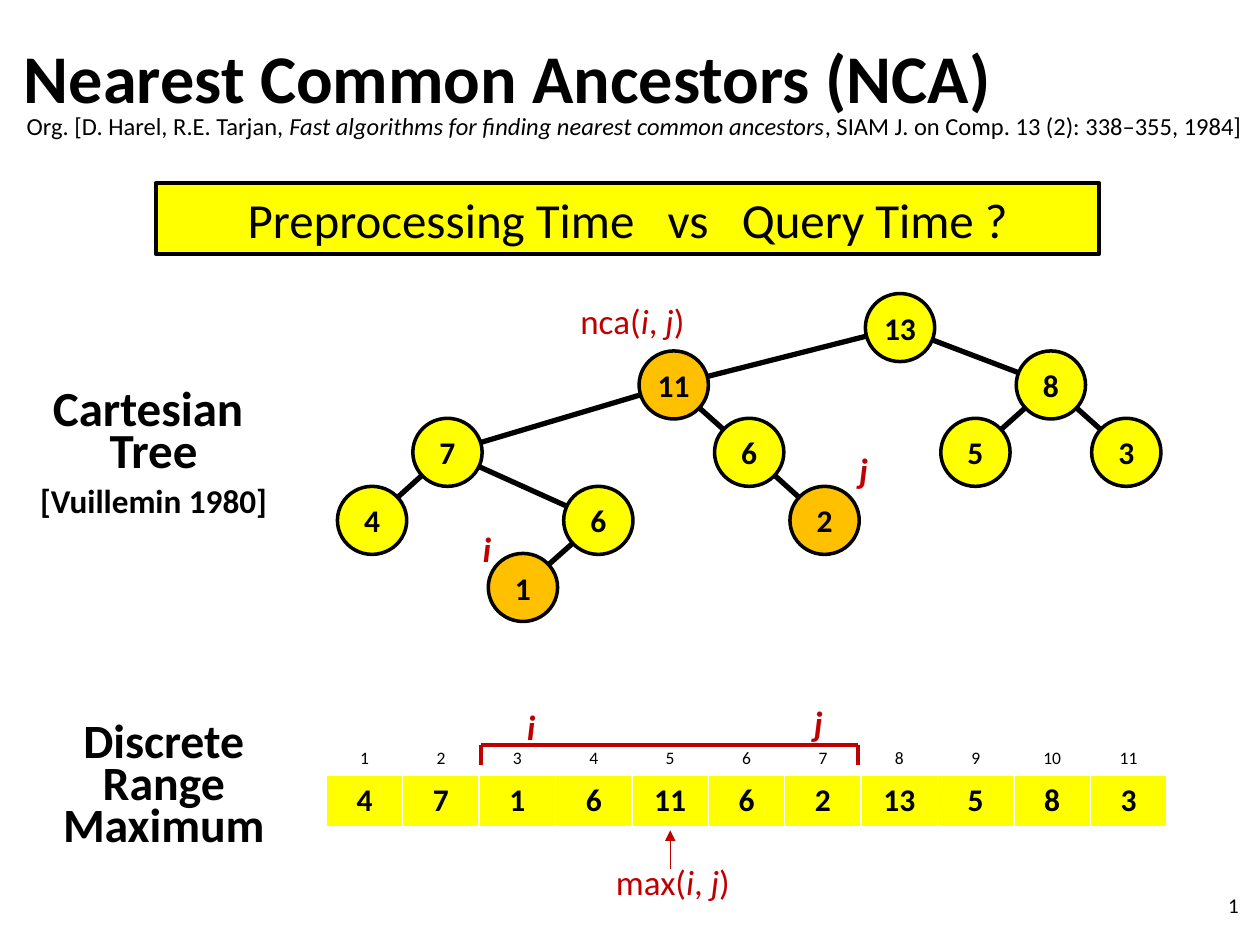
from typing import NamedTuple, Optional

from lxml.etree import SubElement
from pptx import Presentation
from pptx.dml.color import RGBColor
from pptx.enum.shapes import MSO_CONNECTOR, MSO_SHAPE
from pptx.enum.text import MSO_ANCHOR, PP_ALIGN
from pptx.oxml.ns import qn
from pptx.util import Pt

BLACK = RGBColor(0x00, 0x00, 0x00)
WHITE = RGBColor(0xFF, 0xFF, 0xFF)
YELLOW = RGBColor(0xFF, 0xFF, 0x00)
ORANGE = RGBColor(0xFF, 0xC0, 0x00)
RED = RGBColor(0xC0, 0x00, 0x00)

NODE_W, NODE_H = 39.6, 38.9
FIRST_X, STEP_X = 212.6, 43.1
LEVEL_Y = [187.2, 220, 258.5, 297.4, 335.7]


class Node(NamedTuple):
    """A tree node; nodes are listed in array order, parents by array index."""
    value: int
    level: int
    parent: Optional[int]
    fill: RGBColor = YELLOW

    def center(self, index: int) -> tuple[float, float]:
        return FIRST_X + STEP_X * (index - 1), LEVEL_Y[self.level]


class Label(NamedTuple):
    text: str
    x: float
    y: float
    w: float
    bold: bool


NODES = [
    Node(4, 3, 2),
    Node(7, 2, 5),
    Node(1, 4, 4, ORANGE),
    Node(6, 3, 2),
    Node(11, 1, 8, ORANGE),
    Node(6, 2, 5),
    Node(2, 3, 6, ORANGE),
    Node(13, 0, None),
    Node(5, 2, 10),
    Node(8, 1, 8),
    Node(3, 2, 10),
]

LABELS = [
    Label("*i*", 286.6, 399.6, 33.8, True),
    Label("*j*", 450.7, 397.4, 33.8, True),
    Label("*i*", 261.4, 298.1, 33.8, True),
    Label("*j*", 476.6, 252.7, 33.8, True),
    Label("nca(*i*, *j*)", 289.4, 167.8, 144, False),
    Label("max(*i*, *j*)", 312.5, 488.2, 144, False),
]


def write(tf, text: str, *, size: float, bold=False, color=BLACK,
          align=PP_ALIGN.CENTER, spacing=None) -> None:
    """Add a paragraph; *stars* mark italics and \\n marks a line break."""
    p = tf.paragraphs[0]
    if p.runs:
        p = tf.add_paragraph()
    p.alignment = align
    p.line_spacing = spacing
    for k, part in enumerate(text.split("*")):
        for n, line in enumerate(part.split("\n")):
            if n:
                p.add_line_break()
            if not line:
                continue
            r = p.add_run()
            r.text = line
            r.font.name = "Calibri"
            r.font.size = Pt(size)
            r.font.bold = bold
            r.font.italic = k % 2 == 1
            r.font.color.rgb = color


def add_text_frame(s, x: float, y: float, w: float, h: float, anchor=MSO_ANCHOR.MIDDLE):
    tf = s.shapes.add_textbox(Pt(x), Pt(y), Pt(w), Pt(h)).text_frame
    tf.word_wrap = True
    tf.vertical_anchor = anchor
    return tf


def add_line(s, start: tuple[float, float], end: tuple[float, float], *,
             width: float, color=BLACK, arrow=False) -> None:
    cx = s.shapes.add_connector(MSO_CONNECTOR.STRAIGHT, *map(Pt, start + end))
    cx.line.color.rgb = color
    cx.line.width = Pt(width)
    if arrow:
        SubElement(cx.line._get_or_add_ln(), qn("a:tailEnd"), type="triangle")
    SubElement(cx._element.spPr, qn("a:effectLst"))


def add_box(s, kind, x: float, y: float, w: float, h: float, *, fill: RGBColor, line: float):
    sp = s.shapes.add_shape(kind, Pt(x), Pt(y), Pt(w), Pt(h))
    sp.shadow.inherit = False
    sp.fill.solid()
    sp.fill.fore_color.rgb = fill
    sp.line.color.rgb = BLACK
    sp.line.width = Pt(line)
    return sp.text_frame


def add_tree(s) -> None:
    for i, node in enumerate(NODES, 1):
        if node.parent:
            parent = NODES[node.parent - 1]
            add_line(s, parent.center(node.parent), node.center(i), width=3)
    for i, node in enumerate(NODES, 1):
        x, y = node.center(i)
        tf = add_box(s, MSO_SHAPE.OVAL, x - NODE_W / 2, y - NODE_H / 2, NODE_W, NODE_H,
                     fill=node.fill, line=2)
        tf.margin_left = tf.margin_right = 0
        tf.word_wrap = False
        tf.vertical_anchor = MSO_ANCHOR.MIDDLE
        write(tf, str(node.value), size=18, bold=True)


def add_borders(cell) -> None:
    for side in ("a:lnL", "a:lnR", "a:lnT", "a:lnB"):
        ln = SubElement(cell._tc.get_or_add_tcPr(), qn(side), w=str(Pt(1)))
        fill = SubElement(ln, qn("a:solidFill"))
        SubElement(fill, qn("a:srgbClr"), val=str(WHITE))


def add_array(s) -> None:
    table = s.shapes.add_table(2, len(NODES), Pt(186.5), Pt(414), Pt(480.2), Pt(58.4)).table
    table.first_row = table.horz_banding = False
    for i, node in enumerate(NODES):
        index, value = table.cell(0, i), table.cell(1, i)
        index.fill.background()
        index.vertical_anchor = MSO_ANCHOR.BOTTOM
        write(index.text_frame, str(i + 1), size=10)
        add_borders(value)
        value.fill.solid()
        value.fill.fore_color.rgb = YELLOW
        write(value.text_frame, str(node.value), size=18, bold=True)


def add_range_bracket(s) -> None:
    left, right, top, bottom = 275, 490.3, 425.5, 437
    for start, end in [((left, top), (right, top)),
                       ((left, bottom), (left, top)),
                       ((right, bottom), (right, top))]:
        add_line(s, start, end, width=2.25, color=RED)


def main() -> None:
    prs = Presentation()
    prs.slide_width, prs.slide_height = Pt(720), Pt(540)
    s = prs.slides.add_slide(prs.slide_layouts[5])

    title = s.shapes.title
    title.left, title.top, title.width, title.height = Pt(6.5), Pt(20.9), Pt(648), Pt(51.1)
    title.text_frame.vertical_anchor = MSO_ANCHOR.MIDDLE
    write(title.text_frame, "Nearest Common Ancestors (NCA)", size=39, bold=True,
          align=PP_ALIGN.LEFT, spacing=0.9)
    write(add_text_frame(s, -14.4, 26.6, 753.8, 90),
          "Org. [D. Harel, R.E. Tarjan, *Fast algorithms for finding nearest common ancestors*"
          ", SIAM J. on Comp. 13 (2): 338–355, 1984]", size=14)
    question = add_box(s, MSO_SHAPE.RECTANGLE, 89.3, 104.4, 538.6, 41, fill=YELLOW, line=2.25)
    write(question, "Preprocessing Time   vs   Query Time ?", size=28)

    tf = add_text_frame(s, 8.6, 218.9, 158.4, 85)
    write(tf, "Cartesian \nTree", size=28, bold=True, spacing=Pt(24))
    write(tf, "[Vuillemin 1980]", size=19, bold=True, spacing=Pt(24))
    write(add_text_frame(s, 14.4, 408.2, 158.4, 85), "Discrete\nRange\nMaximum",
          size=27.3, bold=True, spacing=Pt(24))

    add_tree(s)
    add_array(s)
    add_range_bracket(s)
    add_line(s, (383, 496.8), (383, 474.5), width=0.75, color=RED, arrow=True)
    for label in LABELS:
        write(add_text_frame(s, label.x, label.y, label.w, 31.7, MSO_ANCHOR.TOP),
              label.text, size=20, bold=label.bold, color=RED)
    write(add_text_frame(s, 547.2, 502.6, 167.8, 28.8), "1", size=12, align=PP_ALIGN.RIGHT)

    prs.save("out.pptx")


if __name__ == "__main__":
    main()
